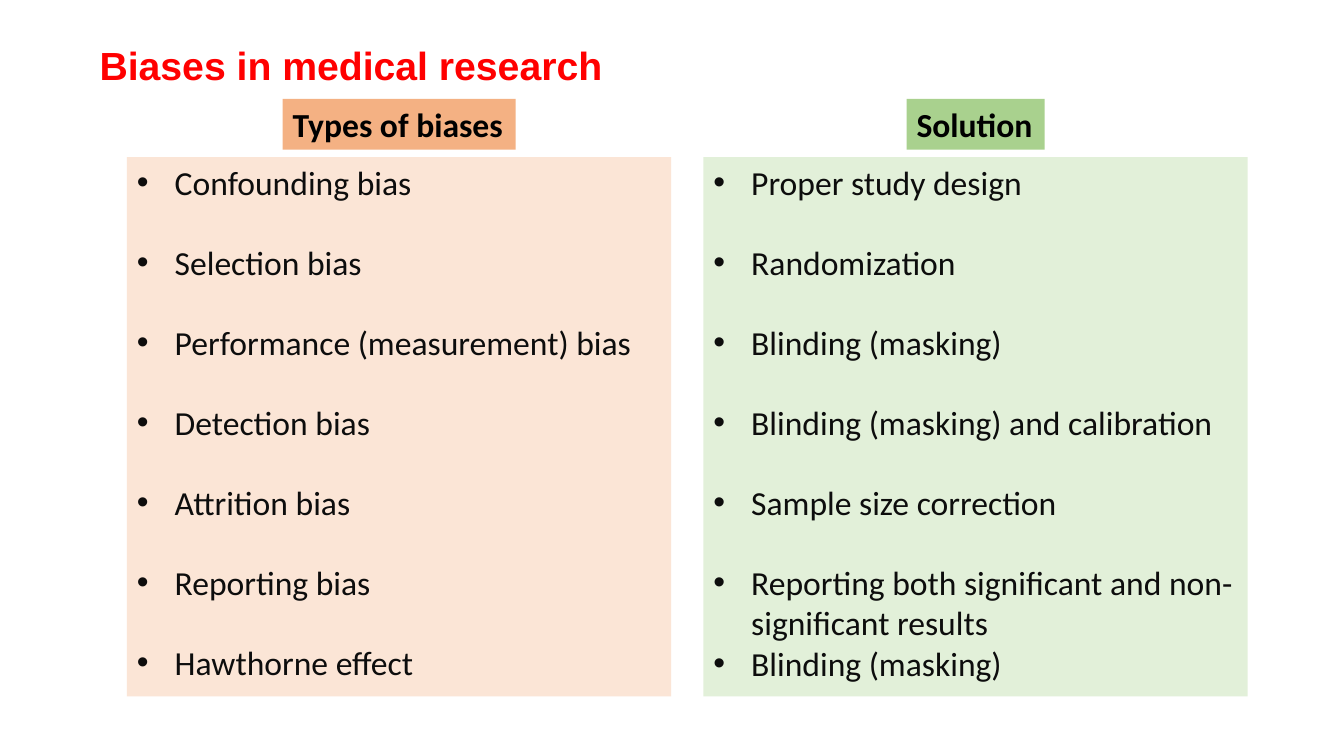
from pptx import Presentation
from pptx.util import Pt
from pptx.dml.color import RGBColor
from pptx.enum.shapes import MSO_SHAPE
from pptx.enum.text import PP_ALIGN, MSO_ANCHOR
from lxml.etree import SubElement
from pptx.oxml.ns import qn

# Content
TITLE = "Biases in medical research"
COLUMNS = [
    ("Types of biases", 166.3, "orange", "peach", [
        "Confounding bias", "Selection bias",
        "Performance (measurement) bias", "Detection bias",
        "Attrition bias", "Reporting bias", "Hawthorne effect"]),
    ("Solution", 98.6, "green", "mint", [
        "Proper study design", "Randomization", "Blinding (masking)",
        "Blinding (masking) and calibration", "Sample size correction",
        "Reporting both significant and non-significant results",
        "Blinding (masking)"]),
]
COLORS = {"red": "FF0000", "black": "000000", "ink": "0D0D0D",
          "orange": "F4B183", "peach": "FBE5D6",
          "green": "A9D18E", "mint": "E2F0D9"}

# Layout in points
LEFT, STEP, WIDTH = 90.7, 411.8, 388.8
HEAD_TOP, HEAD_HIGH = 70.6, 36.3
LIST_TOP, LIST_HIGH = 112.3, 385.2
INDENT, GAP = 27, 28.3

deck = Presentation()
deck.slide_width, deck.slide_height = Pt(960), Pt(540)
slide = deck.slides.add_slide(deck.slide_layouts[6])


def color(name):
    return RGBColor.from_string(COLORS[name])


def write(para, text, size, tint, bold=False, face="Calibri"):
    run = para.add_run()
    run.text = text
    font = run.font
    font.size, font.bold, font.name = Pt(size), bold, face
    font.color.rgb = color(tint)


def add_box(x, y, wide, high, fill, wrap):
    box = slide.shapes.add_shape(
        MSO_SHAPE.RECTANGLE, Pt(x), Pt(y), Pt(wide), Pt(high))
    box.shadow.inherit = False
    box.fill.solid()
    box.fill.fore_color.rgb = color(fill)
    box.line.fill.background()
    frame = box.text_frame
    frame.word_wrap = wrap
    frame.vertical_anchor = MSO_ANCHOR.TOP
    return frame


def add_bullet(para):
    props = para._p.get_or_add_pPr()
    props.set("marL", str(Pt(INDENT)))
    props.set("indent", str(Pt(-INDENT)))
    SubElement(props, qn("a:buFont"), typeface="Arial")
    SubElement(props, qn("a:buChar"), char="•")


# Title
frame = slide.shapes.add_textbox(Pt(20.9), Pt(9.4), Pt(459.4), Pt(51.8)).text_frame
frame.word_wrap = True
para = frame.paragraphs[0]
para.alignment = PP_ALIGN.CENTER
para.line_spacing = 1.5
write(para, TITLE, 28, "red", True, "Arial")

# Columns: a bulleted panel under a centred heading
for col, (head, wide, dark, light, items) in enumerate(COLUMNS):
    x = LEFT + col * STEP
    frame = add_box(x, LIST_TOP, WIDTH, LIST_HIGH, light, True)
    for row, item in enumerate(items):
        para = frame.add_paragraph() if row else frame.paragraphs[0]
        para.alignment = PP_ALIGN.LEFT
        # The two-line item fills its own gap
        full = len(item) > 40 or row == len(items) - 1
        para.space_after = Pt(0 if full and col else GAP)
        add_bullet(para)
        write(para, item, 24, "ink")

    frame = add_box(x + (WIDTH - wide) / 2, HEAD_TOP, wide, HEAD_HIGH, dark, False)
    para = frame.paragraphs[0]
    para.alignment = PP_ALIGN.LEFT
    write(para, head, 24, "black", True)

deck.save("out.pptx")
